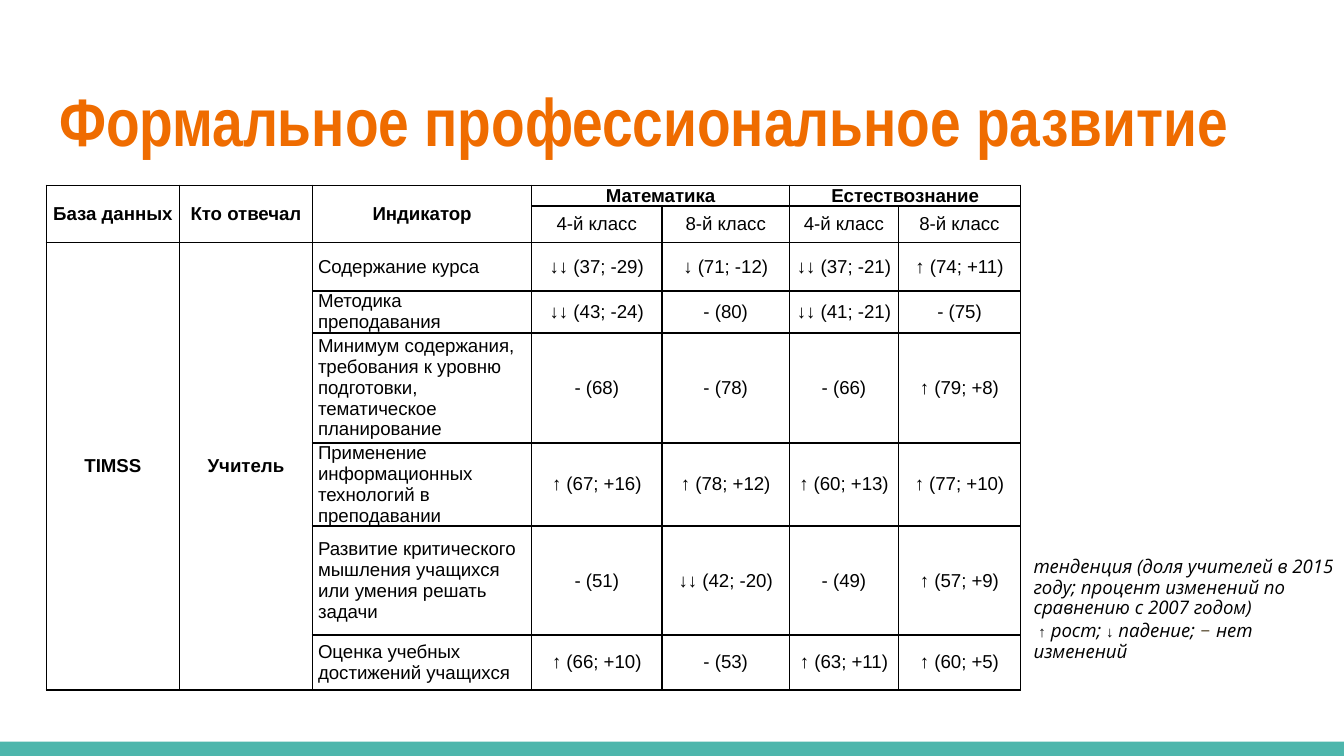
from dataclasses import dataclass

from lxml import etree
from pptx import Presentation
from pptx.dml.color import RGBColor
from pptx.enum import shapes, text
from pptx.oxml.ns import qn
from pptx.util import Pt


@dataclass(frozen=True)
class Theme:
    orange: str = "EF6C00"
    teal: str = "4DB6AC"
    black: str = "000000"
    white: str = "FFFFFF"
    brown: str = "695D46"
    title_font: str = "Arial Narrow"
    table_font: str = "Arial"
    note_font: str = "Open Sans"
    dash_font: str = "Calibri"
    title_size: int = 36
    body_size: int = 10
    arrow_size: int = 8
    dash_size: int = 12
    inset: float = 7.2


THEME = Theme()

COLUMN_WIDTHS = [71.3, 71.3, 117.4, 69.8, 68.4, 58.3, 65.5]
ROW_HEIGHTS = [11, 19.4, 26, 22.3, 59, 44, 58.3, 29.5]
GRADES = ["4-й класс", "8-й класс"]
TABLE_ROWS = [
    ["База данных", "Кто отвечал", "Индикатор", "Математика", "", "Естествознание", ""],
    ["", "", "", *GRADES, *GRADES],
    ["TIMSS", "Учитель", "Содержание курса",
     "↓↓ (37; -29)", "↓ (71; -12)", "↓↓ (37; -21)", "↑ (74; +11)"],
    ["", "", "Методика преподавания",
     "↓↓ (43; -24)", "- (80)", "↓↓ (41; -21)", "- (75)"],
    ["", "", "Минимум содержания, требования к уровню подготовки, тематическое планирование",
     "- (68)", "- (78)", "- (66)", "↑ (79; +8)"],
    ["", "", "Применение информационных технологий в преподавании",
     "↑ (67; +16)", "↑ (78; +12)", "↑ (60; +13)", "↑ (77; +10)"],
    ["", "", "Развитие критического мышления учащихся или умения решать задачи",
     "- (51)", "↓↓ (42; -20)", "- (49)", "↑ (57; +9)"],
    ["", "", "Оценка учебных достижений учащихся",
     "↑ (66; +10)", "- (53)", "↑ (63; +11)", "↑ (60; +5)"],
]
# First and last cell of each merged block, as (row, column)
MERGES = [((0, col), (1, col)) for col in range(3)]
MERGES += [((0, col), (0, col + 1)) for col in (3, 5)]
MERGES += [((2, col), (7, col)) for col in range(2)]


def style_font(font, name, size, color, bold=False, italic=False):
    font.name, font.size = name, Pt(size)
    font.bold, font.italic = bold, italic
    font.color.rgb = RGBColor.from_string(color)


def set_frame(frame):
    frame.word_wrap = True
    frame.auto_size = text.MSO_AUTO_SIZE.NONE
    frame.vertical_anchor = text.MSO_ANCHOR.TOP
    frame.margin_left = frame.margin_right = Pt(THEME.inset)
    frame.margin_top = frame.margin_bottom = Pt(THEME.inset)


def add_footer_band(slide):
    band = slide.shapes.add_shape(
        shapes.MSO_SHAPE.RECTANGLE, Pt(0), Pt(397.4), Pt(720), Pt(7.6))
    band.shadow.inherit = False
    band.fill.solid()
    band.fill.fore_color.rgb = RGBColor.from_string(THEME.teal)
    band.line.fill.background()


def add_title(slide, wording):
    title = slide.shapes.title
    title.left, title.top, title.width, title.height = Pt(24.5), Pt(35.3), Pt(671), Pt(55.4)
    set_frame(title.text_frame)
    title.text_frame.text = wording
    heading = title.text_frame.paragraphs[0]
    heading.alignment = text.PP_ALIGN.LEFT
    style_font(heading.font, THEME.title_font, THEME.title_size, THEME.orange, bold=True)


def add_borders(cell):
    properties = cell._tc.get_or_add_tcPr()
    for side in ("a:lnL", "a:lnR", "a:lnT", "a:lnB"):
        line = etree.SubElement(properties, qn(side), w=str(Pt(1)))
        fill = etree.SubElement(line, qn("a:solidFill"))
        etree.SubElement(fill, qn("a:srgbClr"), val=THEME.black)


def fill_cell(cell, wording, bold, align):
    add_borders(cell)
    cell.fill.solid()
    cell.fill.fore_color.rgb = RGBColor.from_string(THEME.white)
    cell.vertical_anchor = text.MSO_ANCHOR.MIDDLE
    cell.margin_left = cell.margin_right = Pt(3)
    cell.margin_top = cell.margin_bottom = Pt(0)
    cell.text = wording
    paragraph = cell.text_frame.paragraphs[0]
    paragraph.alignment = align
    style_font(paragraph.font, THEME.table_font, THEME.body_size, THEME.black, bold)


def add_trend_table(slide):
    table = slide.shapes.add_table(
        len(ROW_HEIGHTS), len(COLUMN_WIDTHS), Pt(24.8), Pt(99.3),
        Pt(sum(COLUMN_WIDTHS)), Pt(sum(ROW_HEIGHTS))).table
    for column, width in zip(table.columns, COLUMN_WIDTHS):
        column.width = Pt(width)
    for row, height in zip(table.rows, ROW_HEIGHTS):
        row.height = Pt(height)
    for row, wordings in enumerate(TABLE_ROWS):
        for col, wording in enumerate(wordings):
            is_indicator = row > 1 and col == 2
            align = text.PP_ALIGN.LEFT if is_indicator else text.PP_ALIGN.CENTER
            fill_cell(table.cell(row, col), wording, row == 0 or col < 2, align)
    for first, last in MERGES:
        table.cell(*first).merge(table.cell(*last))


def add_legend(slide):
    frame = slide.shapes.add_textbox(Pt(546.7), Pt(291.6), Pt(180.5), Pt(91.4)).text_frame
    set_frame(frame)
    words = (THEME.note_font, THEME.body_size, THEME.black, False, True)
    arrow = (THEME.table_font, THEME.arrow_size, THEME.black)
    dash = (THEME.dash_font, THEME.dash_size, THEME.brown)

    meaning = frame.paragraphs[0]
    meaning.text = ("тенденция (доля учителей в 2015 году; "
                    "процент изменений по сравнению с 2007 годом)")
    style_font(meaning.font, *words)

    symbols = frame.add_paragraph()
    for wording, style in [(" ", words), ("↑", arrow), (" рост; ", words), ("↓", arrow),
                           (" падение; ", words), ("– ", dash), ("нет изменений", words)]:
        run = symbols.add_run()
        run.text = wording
        style_font(run.font, *style)
    for paragraph in frame.paragraphs:
        paragraph.line_spacing = 0.9


def main():
    deck = Presentation()
    deck.slide_width, deck.slide_height = Pt(720), Pt(405)
    slide = deck.slides.add_slide(deck.slide_layouts[5])
    add_footer_band(slide)
    add_title(slide, "Формальное профессиональное развитие")
    add_trend_table(slide)
    add_legend(slide)
    deck.save("out.pptx")


if __name__ == "__main__":
    main()
